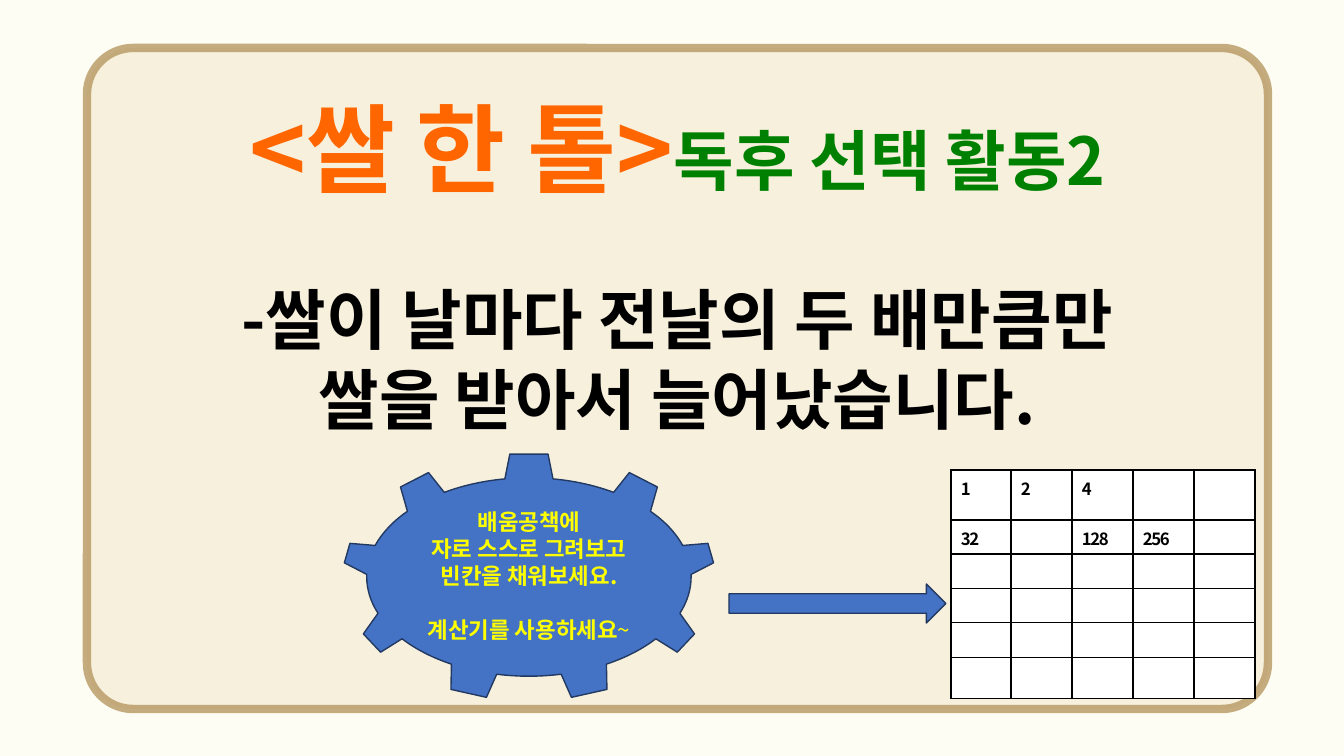
from lxml.etree import SubElement
from pptx import Presentation
from pptx.dml.color import RGBColor
from pptx.enum.shapes import MSO_SHAPE as Shape
from pptx.enum.text import MSO_ANCHOR as Anchor, PP_ALIGN as Align
from pptx.oxml.ns import qn
from pptx.util import Emu, Pt

EMU_PER_PX = 914400 / 100.8
FONT = "Noto Sans CJK KR"

CREAM = RGBColor(0xFE, 0xFD, 0xF4)
SAND = RGBColor(0xEA, 0xD3, 0xA9)
TAN = RGBColor(0xB7, 0x98, 0x61)
ORANGE = RGBColor(0xFF, 0x66, 0x00)
GREEN = RGBColor(0x00, 0x80, 0x00)
BLACK = RGBColor(0x00, 0x00, 0x00)
WHITE = RGBColor(0xFF, 0xFF, 0xFF)
BLUE = RGBColor(0x44, 0x72, 0xC4)
NAVY = RGBColor(0x22, 0x39, 0x61)
YELLOW = RGBColor(0xFF, 0xFF, 0x00)

COLUMNS = [60, 61, 61, 61, 61]
ROWS = [50, 34, 35, 34, 35, 41]
GRAINS = {(0, 0): "1", (0, 1): "2", (0, 2): "4",
          (1, 0): "32", (1, 2): "128", (1, 3): "256"}


def px(length):
    return Emu(round(length * EMU_PER_PX))


def set_alpha(fill, percent):
    """Make a solid fill partly transparent."""
    color = fill._xPr.find(qn("a:solidFill"))[0]
    SubElement(color, qn("a:alpha")).set("val", str(percent * 1000))


def add_figure(slide, preset, box, fill, line, line_width, adjustments):
    figure = slide.shapes.add_shape(preset, *map(px, box))
    for index, value in enumerate(adjustments):
        figure.adjustments[index] = value
    figure.shadow.inherit = False
    figure.fill.solid()
    figure.fill.fore_color.rgb = fill
    figure.line.color.rgb = line
    figure.line.width = Pt(line_width)
    return figure


def style_run(run, size, color, bold=True):
    run.font.size = Pt(size)
    run.font.bold = bold
    run.font.color.rgb = color
    run.font.name = FONT
    SubElement(run.font._element, qn("a:ea")).set("typeface", FONT)


def write_lines(frame, lines):
    """Each line is (runs, line height, gap before); a run is (text, *style)."""
    frame.word_wrap = True
    for index, (runs, height, gap) in enumerate(lines):
        paragraph = frame.add_paragraph() if index else frame.paragraphs[0]
        paragraph.alignment = Align.CENTER
        paragraph.line_spacing = px(height)
        paragraph.space_before = px(gap)
        for text, *style in runs:
            run = paragraph.add_run()
            run.text = text
            style_run(run, *style)


def border_cell(cell):
    properties = cell._tc.get_or_add_tcPr()
    for side in ("lnL", "lnR", "lnT", "lnB"):
        line = SubElement(properties, qn(f"a:{side}"), w=str(Pt(1)))
        fill = SubElement(line, qn("a:solidFill"))
        SubElement(fill, qn("a:srgbClr"), val=str(BLACK))


def fill_cell(cell, text):
    border_cell(cell)
    cell.fill.solid()
    cell.fill.fore_color.rgb = WHITE
    cell.margin_left = cell.margin_right = px(10)
    cell.margin_top, cell.margin_bottom = px(6), 0
    paragraph = cell.text_frame.paragraphs[0]
    if text:
        paragraph.text = text
        run = paragraph.runs[0]
        style_run(run, 12, BLACK)
        run.font._element.set("spc", "-100")
    else:
        # Keeps empty rows from growing to the default text size
        SubElement(paragraph._p, qn("a:endParaRPr"), sz="1200")


def add_grain_table(slide, left, top):
    frame = slide.shapes.add_table(len(ROWS), len(COLUMNS), px(left), px(top),
                                   px(sum(COLUMNS)), px(sum(ROWS)))
    table = frame.table
    for column, width in zip(table.columns, COLUMNS):
        column.width = px(width)
    for r, height in enumerate(ROWS):
        table.rows[r].height = px(height)
        for c in range(len(COLUMNS)):
            fill_cell(table.cell(r, c), GRAINS.get((r, c), ""))


def main():
    deck = Presentation()
    deck.slide_width, deck.slide_height = px(1344), px(756)
    slide = deck.slides.add_slide(deck.slide_layouts[6])
    slide.background.fill.solid()
    slide.background.fill.fore_color.rgb = CREAM

    # Panel with title and statement
    panel = add_figure(slide, Shape.ROUNDED_RECTANGLE, (87, 48, 1181, 661),
                       SAND, TAN, 6, [0.07])
    set_alpha(panel.fill, 30)
    set_alpha(panel.line.fill, 80)
    panel.text_frame.vertical_anchor = Anchor.TOP
    write_lines(panel.text_frame, [
        ([("<쌀 한 톨>", 69, ORANGE), ("독후 선택 활동2", 47, GREEN)], 138, 0),
        ([("-쌀이 날마다 전날의 두 배만큼만", 47, BLACK)], 80, 73),
        ([("쌀을 받아서 늘어났습니다.", 47, BLACK)], 80, 0),
    ])

    # Table of grains per day
    add_grain_table(slide, 951, 470)

    # Arrow from the task to the table
    add_figure(slide, Shape.RIGHT_ARROW, (729, 584, 217, 39),
               BLUE, NAVY, 1, [0.5, 0.5])

    # Task in a gear
    task = add_figure(slide, Shape.GEAR_9, (342, 453, 374, 248),
                      BLUE, NAVY, 1, [0.1, 0.02])
    task.text_frame.vertical_anchor = Anchor.MIDDLE
    write_lines(task.text_frame, [
        ([("배움공책에", 16, YELLOW)], 27, 0),
        ([("자로 스스로 그려보고 빈칸을 채워보세요.", 16, YELLOW)], 27, 0),
        ([("계산기를 사용하세요", 16, YELLOW), ("~", 16, YELLOW, False)], 27, 27),
    ])

    deck.save("out.pptx")


if __name__ == "__main__":
    main()
